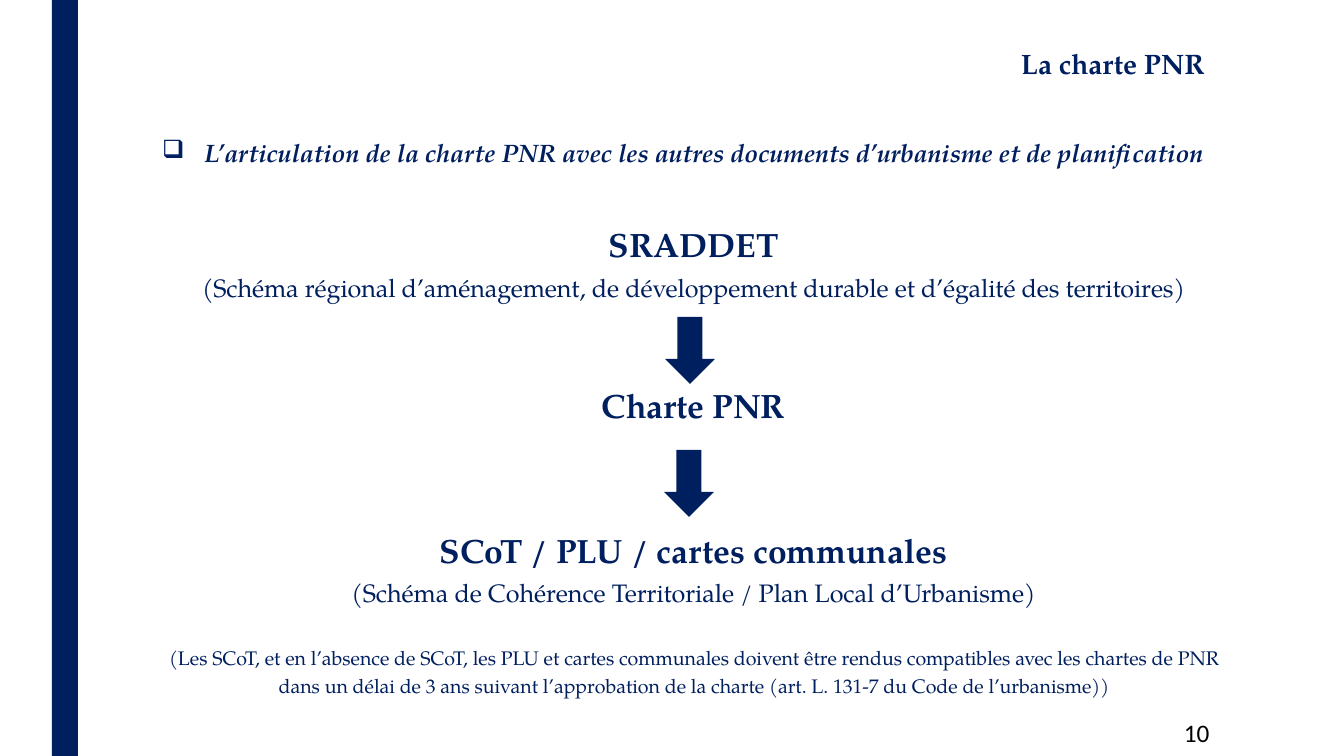
from lxml import etree
from pptx import Presentation
from pptx.dml.color import RGBColor
from pptx.enum.shapes import MSO_SHAPE
from pptx.enum.text import PP_ALIGN
from pptx.oxml.ns import qn
from pptx.util import Pt

PX = 12192000 / 1344
RECTANGLE = MSO_SHAPE.RECTANGLE
DOWN_ARROW = MSO_SHAPE.DOWN_ARROW
LEFT = PP_ALIGN.LEFT
CENTER = PP_ALIGN.CENTER
NAVY = "001F5F"
BLACK = "000000"
SERIF = "TeX Gyre Pagella"


def px(n):
    return round(n * PX)


def rgb(value):
    return RGBColor.from_string(value)


class Deck:
    def __init__(self, width, height):
        self.prs = Presentation()
        self.prs.slide_width = px(width)
        self.prs.slide_height = px(height)
        self.s = self.prs.slides.add_slide(self.prs.slide_layouts[6])

    def shape(self, kind, x, y, w, h, color=NAVY):
        sp = self.s.shapes.add_shape(kind, px(x), px(y), px(w), px(h))
        sp.shadow.inherit = False
        sp.fill.solid()
        sp.fill.fore_color.rgb = rgb(color)
        sp.line.fill.background()

    def box(self, x, y, w, h, top=1):
        sp = self.s.shapes.add_textbox(px(x), px(y), px(w), px(h))
        tf = sp.text_frame
        tf.word_wrap = True
        tf.margin_left = tf.margin_right = tf.margin_bottom = 0
        tf.margin_top = px(top)
        return tf

    def text(self, tf, words, size, before=0, bold=False, italic=False, align=LEFT,
             left=0, hang=0, bullet=None, spacing=None, track=0,
             font=SERIF, color=NAVY):
        p = tf.paragraphs[0]
        if p.runs:
            p = tf.add_paragraph()
        r = p.add_run()
        r.text = words
        p.alignment = align
        p.space_before = Pt(before)
        p.line_spacing = spacing
        p.font.name = font
        p.font.size = Pt(size)
        p.font.bold = bold
        p.font.italic = italic
        p.font.color.rgb = rgb(color)
        r.font._element.set("spc", str(track))
        pPr = p._p.get_or_add_pPr()
        pPr.set("marL", str(px(left)))
        pPr.set("indent", str(-px(hang)))
        if bullet:
            bu = etree.Element(qn("a:buChar"), char=bullet)
            pPr.insert_element_before(bu, "a:tabLst", "a:defRPr", "a:extLst")


def main():
    deck = Deck(1344, 756)
    deck.shape(RECTANGLE, 52, 0, 26, 756)

    title = deck.box(1020, 45, 188, 36)
    deck.text(title, "La charte PNR", 20, before=1.1, bold=True, left=1, track=-5)

    region = deck.box(160, 136, 1052, 171)
    deck.text(region, "L’articulation de la charte PNR avec les autres documents "
              "d’urbanisme et de planification", 18, before=1, bold=True, italic=True,
              left=44, hang=42, bullet="❑", track=-8)
    deck.text(region, "SRADDET", 24, before=40.7, bold=True, align=CENTER, left=15)
    deck.text(region, "(Schéma régional d’aménagement, de développement durable et "
              "d’égalité des territoires)", 18, before=5.2, align=CENTER, left=15,
              track=-8)

    charter = deck.box(601, 384, 188, 43)
    deck.text(charter, "Charte PNR", 24, before=1, bold=True, left=1, track=-10)

    local = deck.box(162, 519, 1063, 184, top=11)
    deck.text(local, "SCoT / PLU / cartes communales", 24, before=8.1, bold=True,
              align=CENTER, track=-3)
    deck.text(local, "(Schéma de Cohérence Territoriale / Plan Local d’Urbanisme)", 18,
              before=5.2, align=CENTER, track=-5)
    deck.text(local, "(Les SCoT, et en l’absence de SCoT, les PLU et cartes communales "
              "doivent être rendus compatibles avec les chartes de PNR dans un délai "
              "de 3 ans suivant l’approbation de la charte (art. L. 131-7 du Code de "
              "l’urbanisme))", 14, before=24, align=CENTER, left=1, spacing=1.2,
              track=-7)

    for x, y in ((665, 317), (664, 450)):
        deck.shape(DOWN_ARROW, x, y, 50, 67)

    number = deck.box(1180, 722, 34, 28, top=0)
    deck.text(number, "10", 18, left=4, spacing=Pt(18.1), font="Calibri", color=BLACK)

    deck.prs.save("out.pptx")


if __name__ == "__main__":
    main()
